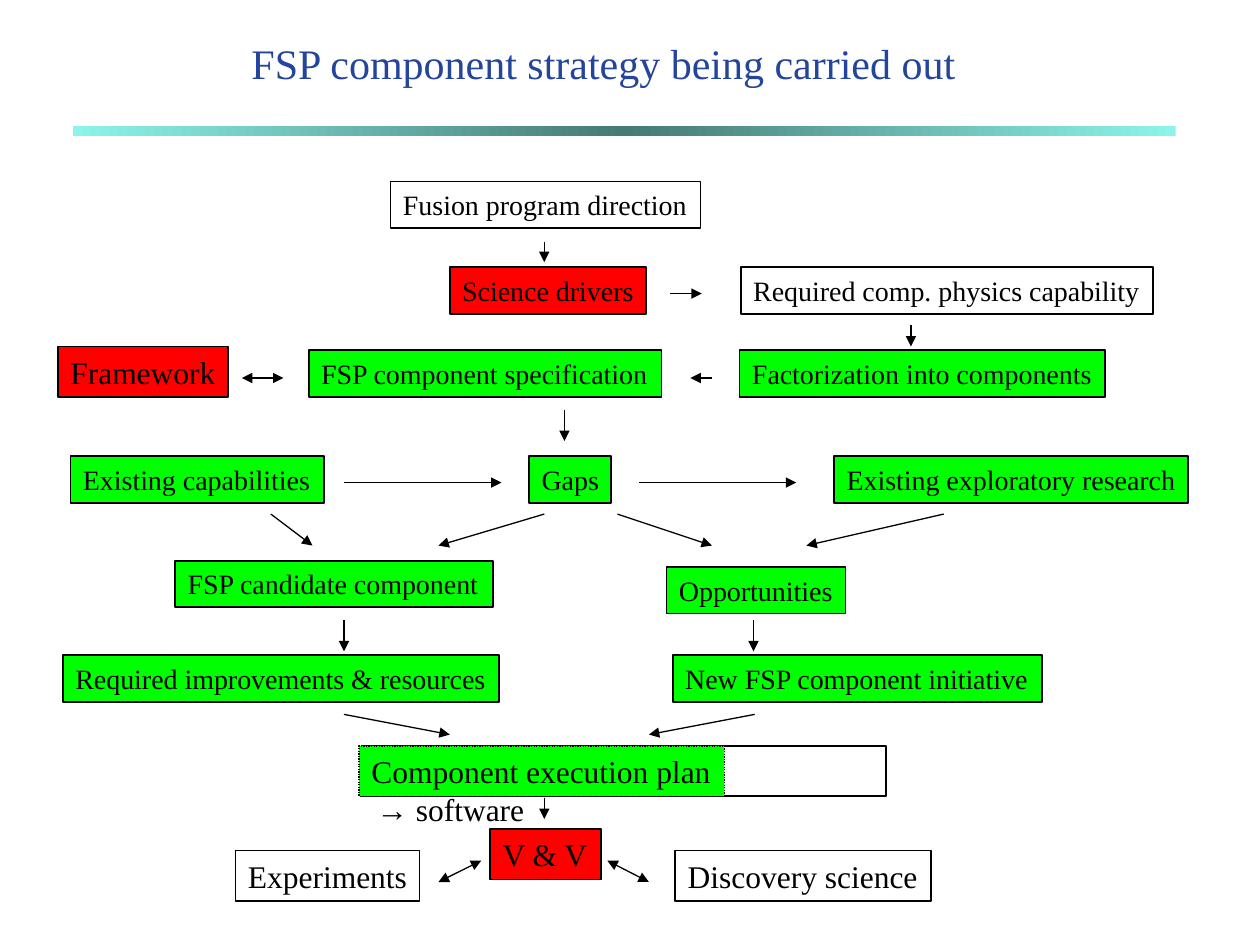
"""Build the FSP component strategy flow chart slide."""
from copy import deepcopy

from lxml.etree import SubElement
from pptx import Presentation
from pptx.dml.color import RGBColor
from pptx.enum.dml import MSO_LINE
from pptx.enum.shapes import MSO_CONNECTOR as Link, MSO_SHAPE as Shape
from pptx.enum.text import MSO_ANCHOR as Anchor, MSO_AUTO_SIZE as AutoSize, PP_ALIGN as Align
from pptx.oxml.ns import qn
from pptx.util import Cm, Pt

THEME = {
    "font": "Times New Roman", "symbol_font": "Arial",
    "title": "24459C", "ink": "000000", "red": "FF0000", "green": "00FF00",
    "bar": [(0, "8CF4EA"), (0.5, "467A75"), (1, "8CF4EA")],
    "title_size": 24, "small": 16, "large": 18,
    "height": {"small": 0.37, "large": 0.4}, "box_line": 1, "arrow_line": 0.75,
}
CM_PER_INCH = 2.54
TITLE = "FSP component strategy being carried out"
PLAN_OUTLINE = ("", 2.87, 4.16, None)
PLAN = ("Component execution plan", 2.85, 2.9, "green")

ROWS = [
    (1.44, "small", [("Fusion program direction", 3.1, 2.46, None)]),
    (2.12, "small", [("Science drivers", 3.57, 1.56, "red"),
                     ("Required comp. physics capability", 5.88, 3.27, None)]),
    (2.75, "large", [("Framework", 0.46, 1.35, "red")]),
    (2.78, "small", [("FSP component specification", 2.45, 2.8, "green"),
                     ("Factorization into components", 5.87, 2.9, "green")]),
    (3.62, "small", [("Existing capabilities", 0.56, 2.01, "green"),
                     ("Gaps", 4.2, 0.65, "green"),
                     ("Existing exploratory research", 6.62, 2.81, "green")]),
    (4.45, "small", [("FSP candidate component", 1.39, 2.52, "green")]),
    (4.5, "small", [("Opportunities", 5.29, 1.42, "green")]),
    (5.2, "small", [("Required improvements & resources", 0.5, 3.46, "green"),
                    ("New FSP component initiative", 5.34, 2.93, "green")]),
    (5.92, "large", [PLAN_OUTLINE, PLAN]),
    (6.58, "large", [("V & V", 3.89, 0.88, "red")]),
    (6.75, "large", [("Experiments", 1.87, 1.46, None),
                     ("Discovery science", 5.36, 2.03, None)]),
]
ONE_WAY = [
    (4.32, 1.92, 4.32, 2.08), (5.32, 2.33, 5.57, 2.33), (7.23, 2.58, 7.23, 2.75),
    (5.65, 3, 5.48, 3), (4.48, 3.25, 4.48, 3.5), (2.73, 3.83, 3.98, 3.83),
    (5.07, 3.83, 6.32, 3.83), (2.15, 4.08, 2.48, 4.33), (4.32, 4.08, 3.48, 4.33),
    (4.9, 4.08, 5.65, 4.33), (7.49, 4.08, 6.4, 4.33), (2.73, 4.92, 2.73, 5.17),
    (5.98, 4.92, 5.98, 5.17), (2.73, 5.67, 3.57, 5.83), (5.99, 5.67, 5.15, 5.83),
    (4.32, 6.33, 4.32, 6.5),
]
TWO_WAY = [(1.92, 3, 2.25, 3), (3.48, 7, 3.82, 6.83), (4.82, 6.83, 5.15, 7)]


def lengths(*inches):
    return [Cm(value * CM_PER_INCH) for value in inches]


def color(name):
    return RGBColor.from_string(THEME.get(name, name))


def write(shape, runs, size, ink="ink", align=Align.LEFT, wrap=False):
    frame = shape.text_frame
    side, edge = lengths(0.1, 0.05)
    layout = {"margin_left": side, "margin_right": side, "margin_top": edge,
              "margin_bottom": edge, "word_wrap": wrap, "auto_size": AutoSize.NONE,
              "vertical_anchor": Anchor.TOP}
    for name, value in layout.items():
        setattr(frame, name, value)
    para = frame.paragraphs[0]
    para.alignment = align
    for text, font in runs:
        span = para.add_run()
        span.text = text
        for name, value in {"name": THEME[font], "size": Pt(THEME[size]), "bold": False}.items():
            setattr(span.font, name, value)
        span.font.color.rgb = color(ink)


def add_box(slide, text, left, top, width, fill, size):
    box = slide.shapes.add_shape(
        Shape.RECTANGLE, *lengths(left, top, width, THEME["height"][size]))
    box.shadow.inherit = False
    if fill:
        box.fill.solid()
        box.fill.fore_color.rgb = color(fill)
    else:
        box.fill.background()
    box.line.color.rgb = color("ink")
    box.line.width = Pt(THEME["box_line"])
    if text:
        write(box, [(text, "font")], size)
    return box


def add_arrow(slide, ends, heads):
    arrow = slide.shapes.add_connector(Link.STRAIGHT, *lengths(*ends))
    arrow.line.color.rgb = color("ink")
    arrow.line.width = Pt(THEME["arrow_line"])
    outline = arrow.line._get_or_add_ln()
    for head in heads:
        SubElement(outline, qn(f"a:{head}"), type="triangle")
    SubElement(arrow._element.spPr, qn("a:effectLst"))


def add_bar(slide):
    bar = slide.shapes.add_shape(Shape.RECTANGLE, *lengths(0.58, 1, 8.75, 0.08))
    bar.shadow.inherit = False
    bar.line.fill.background()
    bar.fill.gradient()
    bar.fill.gradient_angle = 0
    stop_list = bar._element.spPr.find(f".//{qn('a:gsLst')}")
    stop_list.append(deepcopy(stop_list[0]))
    for stop, (position, shade) in zip(bar.fill.gradient_stops, THEME["bar"]):
        stop.position = position
        stop.color.rgb = color(shade)


def main():
    deck = Presentation()
    deck.slide_width, deck.slide_height = lengths(10, 7.5)
    slide = deck.slides.add_slide(deck.slide_layouts[5])
    title = slide.shapes.title
    title.left, title.top, title.width, title.height = lengths(1.25, 0.25, 7.08, 0.67)
    write(title, [(TITLE, "font")], "title_size", "title", Align.CENTER, True)
    add_bar(slide)
    for top, size, boxes in ROWS:
        for text, left, width, fill in boxes:
            box = add_box(slide, text, left, top, width, fill, size)
            if text == PLAN[0]:
                box.line.dash_style = MSO_LINE.ROUND_DOT
                box.line.width = Pt(THEME["arrow_line"])
    result = slide.shapes.add_textbox(*lengths(2.89, 6.22, 1.4, 0.4))
    write(result, [("→", "symbol_font"), (" software", "font")], "large")
    for ends in ONE_WAY:
        add_arrow(slide, ends, ["tailEnd"])
    for ends in TWO_WAY:
        add_arrow(slide, ends, ["headEnd", "tailEnd"])
    deck.save("out.pptx")


if __name__ == "__main__":
    main()
